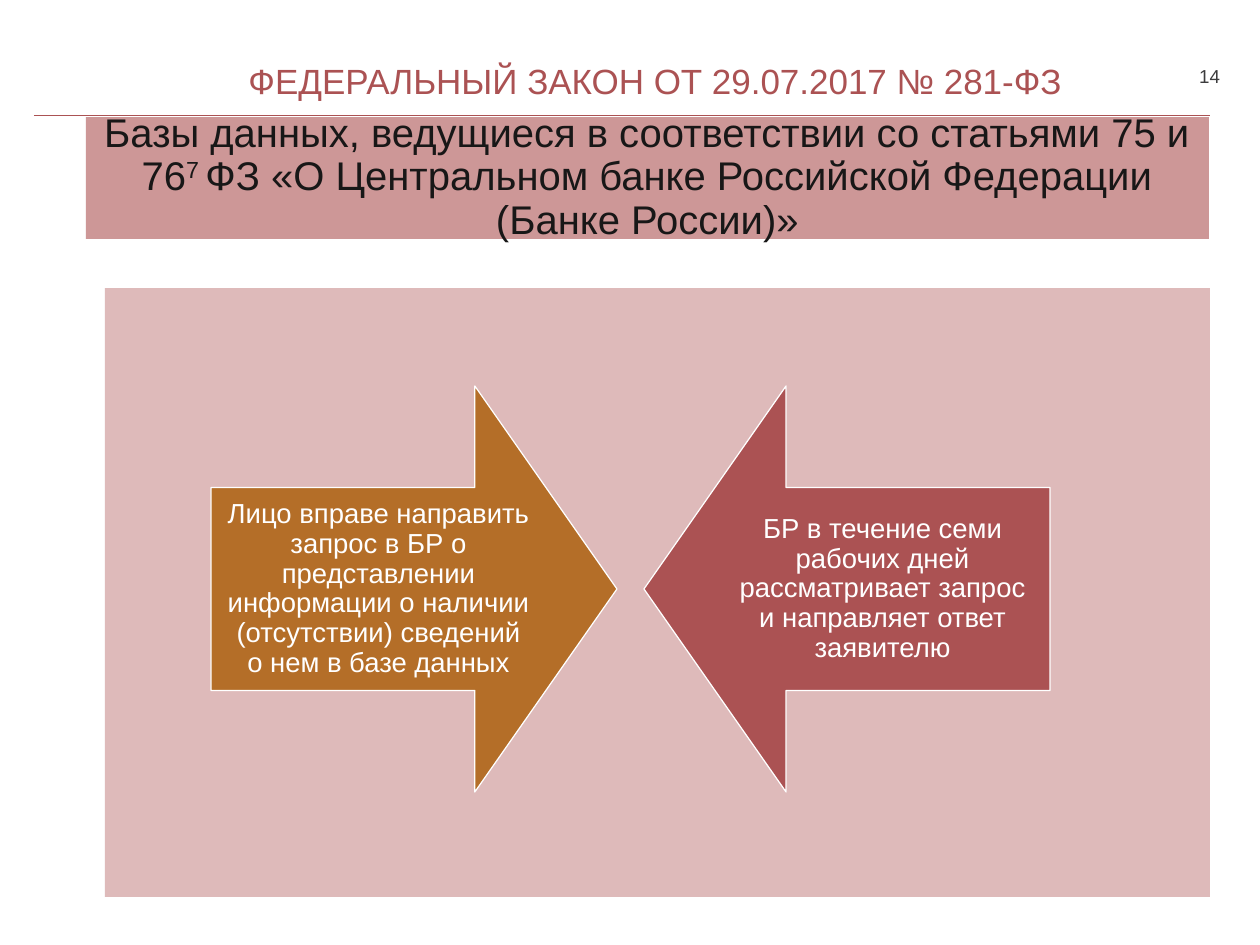
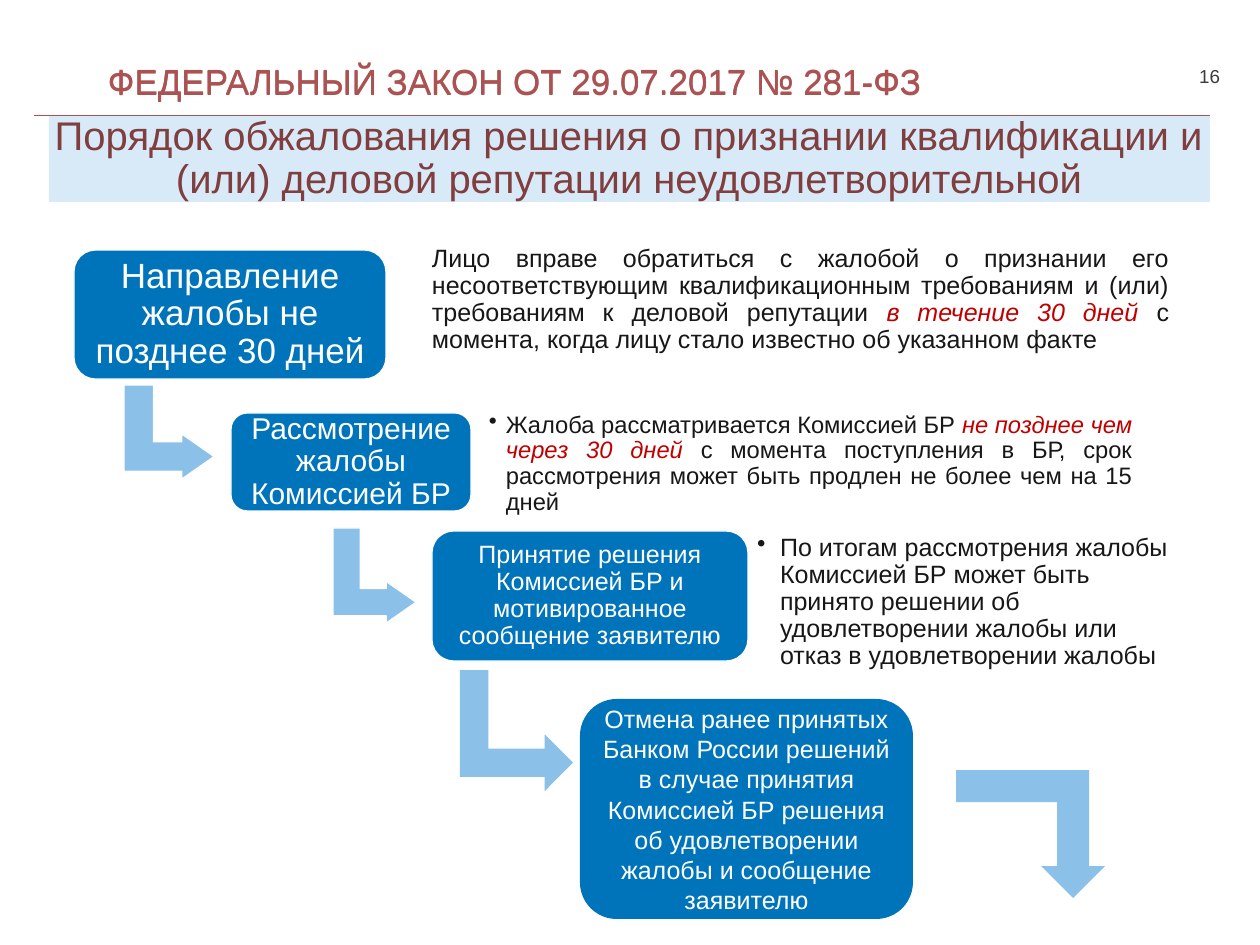
"""Build two slides on federal law 281-ФЗ: database requests and the appeal procedure."""
from dataclasses import dataclass
from typing import Optional

from lxml import etree
from pptx import Presentation
from pptx import util as u
from pptx.dml.color import RGBColor
from pptx.enum import shapes, text
from pptx.oxml.ns import qn

PX = 10160
FONT = "Arial"
WHITE, INK, GREY = "FFFFFF", "181717", "3C3C3D"
BRICK, MAROON, ALERT, OCHRE = "AB5253", "803E3E", "C00000", "B46E28"
ROSE, PINK, PALE_BLUE = "CD9797", "DEBABA", "D8EAF8"
BLUE, SKY = "0074BA", "8BC0E9"
LEFT, CENTER = text.PP_ALIGN.LEFT, text.PP_ALIGN.CENTER
RIGHT, JUSTIFY = text.PP_ALIGN.RIGHT, text.PP_ALIGN.JUSTIFY
TOP, MIDDLE = text.MSO_ANCHOR.TOP, text.MSO_ANCHOR.MIDDLE
Kind = shapes.MSO_SHAPE
STEP_RADIUS = (0.167,)
BEND = (0.328, 0.25, 0.358)


@dataclass(frozen=True)
class Frame:
    """A rectangle in px."""
    left: int
    top: int
    width: int
    height: int

    def emu(self) -> tuple:
        """Return the rectangle in EMU."""
        return tuple(px(side) for side in (self.left, self.top, self.width, self.height))


@dataclass(frozen=True)
class Span:
    """A piece of text that may differ from its paragraph."""
    words: str
    color: Optional[str] = None
    italic: bool = False
    raised: bool = False


@dataclass(frozen=True)
class Copy:
    """One paragraph with its look and the insets of its frame."""
    spans: tuple
    size: int
    color: str = WHITE
    align: int = CENTER
    anchor: int = MIDDLE
    inset: tuple = (0, 0)
    spacing: float = 0.9
    hanging: int = 0


@dataclass(frozen=True)
class Block:
    """A filled preset shape, with or without text."""
    frame: Frame
    fill: str
    kind: int = Kind.RECTANGLE
    adjust: tuple = ()
    outlined: bool = False
    turn: int = 0
    mirrored: bool = False
    copy: Optional[Copy] = None


@dataclass(frozen=True)
class Note:
    """A plain text box."""
    frame: Frame
    copy: Copy


def px(length: int) -> int:
    """Turn px into EMU."""
    return u.Emu(length * PX)


def rgb(value: str) -> RGBColor:
    """Turn a hex string into a colour."""
    return RGBColor.from_string(value)


def plain(words: str, size: int, **look) -> Copy:
    """Make a paragraph of one span."""
    return Copy((Span(words),), size, **look)


def write(box, copy: Copy) -> None:
    """Fill the text frame of a box with a paragraph."""
    frame = box.text_frame
    frame.word_wrap = True
    frame.vertical_anchor = copy.anchor
    frame.margin_left = frame.margin_right = px(copy.inset[0])
    frame.margin_top = frame.margin_bottom = px(copy.inset[1])
    para = frame.paragraphs[0]
    para.alignment = copy.align
    para.line_spacing = copy.spacing
    if copy.hanging:
        props = para._p.get_or_add_pPr()
        props.set("marL", str(px(copy.hanging)))
        props.set("indent", str(-px(copy.hanging)))
        etree.SubElement(props, qn("a:buChar")).set("char", "•")
    para.font.name = FONT
    para.font.size = u.Pt(copy.size)
    para.font.color.rgb = rgb(copy.color)
    for span in copy.spans:
        run = para.add_run()
        run.text = span.words
        if span.color:
            run.font.color.rgb = rgb(span.color)
        if span.italic:
            run.font.italic = True
        if span.raised:
            run._r.get_or_add_rPr().set("baseline", "30000")


def draw_block(page, block: Block) -> None:
    """Draw a filled shape."""
    shape = page.shapes.add_shape(block.kind, *block.frame.emu())
    shape.shadow.inherit = False
    shape.fill.solid()
    shape.fill.fore_color.rgb = rgb(block.fill)
    if block.outlined:
        shape.line.color.rgb = rgb(WHITE)
        shape.line.width = u.Pt(1)
    else:
        shape.line.fill.background()
    for index, value in enumerate(block.adjust):
        shape.adjustments[index] = value
    shape.rotation = block.turn
    if block.mirrored:
        shape._element.spPr.find(qn("a:xfrm")).set("flipH", "1")
    if block.copy:
        write(shape, block.copy)


def draw_note(page, note: Note) -> None:
    """Draw a text box."""
    write(page.shapes.add_textbox(*note.frame.emu()), note.copy)


def draw_rule(page) -> None:
    """Draw the thin line under the heading."""
    rule = page.shapes.add_connector(
        shapes.MSO_CONNECTOR.STRAIGHT, px(34), px(115), px(1210), px(115))
    rule.line.color.rgb = rgb(BRICK)
    rule.line.width = u.Pt(0.25)
    etree.SubElement(rule._element.spPr, qn("a:effectLst"))


def add_page(deck, number: int, band: Block, headings: tuple, align: int):
    """Add a slide with its rule, title band, heading and number."""
    page = deck.slides.add_slide(deck.slide_layouts[6])
    draw_rule(page)
    draw_block(page, band)
    for frame in headings:
        draw_note(page, Note(frame, plain(
            "ФЕДЕРАЛЬНЫЙ ЗАКОН ОТ 29.07.2017 № 281-ФЗ", 28, color=BRICK, align=align)))
    draw_note(page, Note(Frame(1170, 45, 50, 65),
                         plain(str(number), 15, color=GREY, align=RIGHT)))
    return page


def build_requests(deck) -> None:
    """Build the slide on database requests."""
    title = Copy((
        Span("Базы данных, ведущиеся в соответствии со статьями 75 и 76"),
        Span("7 ", raised=True),
        Span("ФЗ «О Центральном банке Российской Федерации (Банке России)»"),
    ), 32, color=INK)
    band = Block(Frame(86, 117, 1123, 122), ROSE, copy=title)
    page = add_page(deck, 14, band, (Frame(113, 47, 1084, 72),), CENTER)
    draw_block(page, Block(Frame(105, 288, 1105, 609), PINK))
    arrows = (
        (Kind.RIGHT_ARROW, OCHRE, "Лицо вправе направить запрос в БР о представлении "
         "информации о наличии (отсутствии) сведений о нем в базе данных"),
        (Kind.LEFT_ARROW, BRICK, "БР в течение семи рабочих дней рассматривает запрос "
         "и направляет ответ заявителю"),
    )
    for index, (kind, fill, words) in enumerate(arrows):
        draw_block(page, Block(
            Frame(211 + 433 * index, 386, 406, 406), fill, kind, (0.5, 0.35),
            outlined=True, copy=plain(words, 22, inset=(15, 15))))


def step(frame: Frame, words: str, size: int, inset: int) -> Block:
    """Make one rounded step of the procedure."""
    return Block(frame, BLUE, Kind.ROUNDED_RECTANGLE, STEP_RADIUS, outlined=True,
                 copy=plain(words, size, inset=(inset, inset)))


def bend(frame: Frame, adjust: tuple = (), turn: int = 90, mirrored: bool = False) -> Block:
    """Make a bent arrow leading to the next step."""
    return Block(frame, SKY, Kind.BENT_UP_ARROW, adjust, bool(adjust), turn, mirrored)


def build_appeal(deck) -> None:
    """Build the slide on the appeal procedure."""
    band = Block(Frame(49, 116, 1161, 86), PALE_BLUE, copy=plain(
        "Порядок обжалования решения о признании квалификации и (или) деловой "
        "репутации неудовлетворительной", 32, color=MAROON))
    headings = tuple(Frame(108, top, 1082, 72) for top in (47, 48))
    page = add_page(deck, 16, band, headings, LEFT)
    blocks = (
        bend(Frame(122, 387, 94, 90), BEND),
        step(Frame(74, 250, 312, 129), "Направление жалобы не позднее 30 дней", 28, 11),
        bend(Frame(327, 534, 95, 83), BEND),
        step(Frame(231, 413, 240, 98), "Рассмотрение жалобы Комиссией БР", 24, 9),
        step(Frame(432, 531, 316, 130), "Принятие решения Комиссией БР и "
             "мотивированное сообщение заявителю", 20, 7),
        Block(Frame(580, 699, 333, 220), BLUE, Kind.ROUNDED_RECTANGLE, copy=plain(
            "Отмена ранее принятых Банком России решений в случае принятия Комиссией БР "
            "решения об удовлетворении жалобы и сообщение заявителю",
            20, inset=(9, 5), spacing=1.0)),
        bend(Frame(456, 674, 121, 113)),
        bend(Frame(956, 770, 149, 128), turn=180, mirrored=True),
    )
    notes = (
        Note(Frame(432, 246, 737, 128), Copy((
            Span("Лицо вправе обратиться с жалобой о признании его несоответствующим "
                 "квалификационным требованиям и (или) требованиям к деловой репутации "),
            Span("в течение 30 дней ", ALERT, italic=True),
            Span("с момента, когда лицу стало известно об указанном факте"),
        ), 20, INK, JUSTIFY, TOP)),
        Note(Frame(480, 404, 661, 120), Copy((
            Span("Жалоба рассматривается Комиссией БР "),
            Span("не позднее чем через 30 дней", ALERT, italic=True),
            Span(" с момента поступления в БР, срок рассмотрения может быть продлен "
                 "не более чем на 15 дней"),
        ), 19, INK, JUSTIFY, inset=(9, 9), hanging=17)),
        Note(Frame(750, 534, 427, 136), plain(
            "По итогам рассмотрения жалобы Комиссией БР может быть принято решении об "
            "удовлетворении жалобы или отказ в удовлетворении жалобы",
            20, color=INK, align=LEFT, inset=(7, 7), hanging=23)),
    )
    for block in blocks:
        draw_block(page, block)
    for note in notes:
        draw_note(page, note)


def main() -> None:
    """Build and save the deck."""
    deck = Presentation()
    deck.slide_width, deck.slide_height = px(1260), px(945)
    build_requests(deck)
    build_appeal(deck)
    deck.save("out.pptx")


if __name__ == "__main__":
    main()
